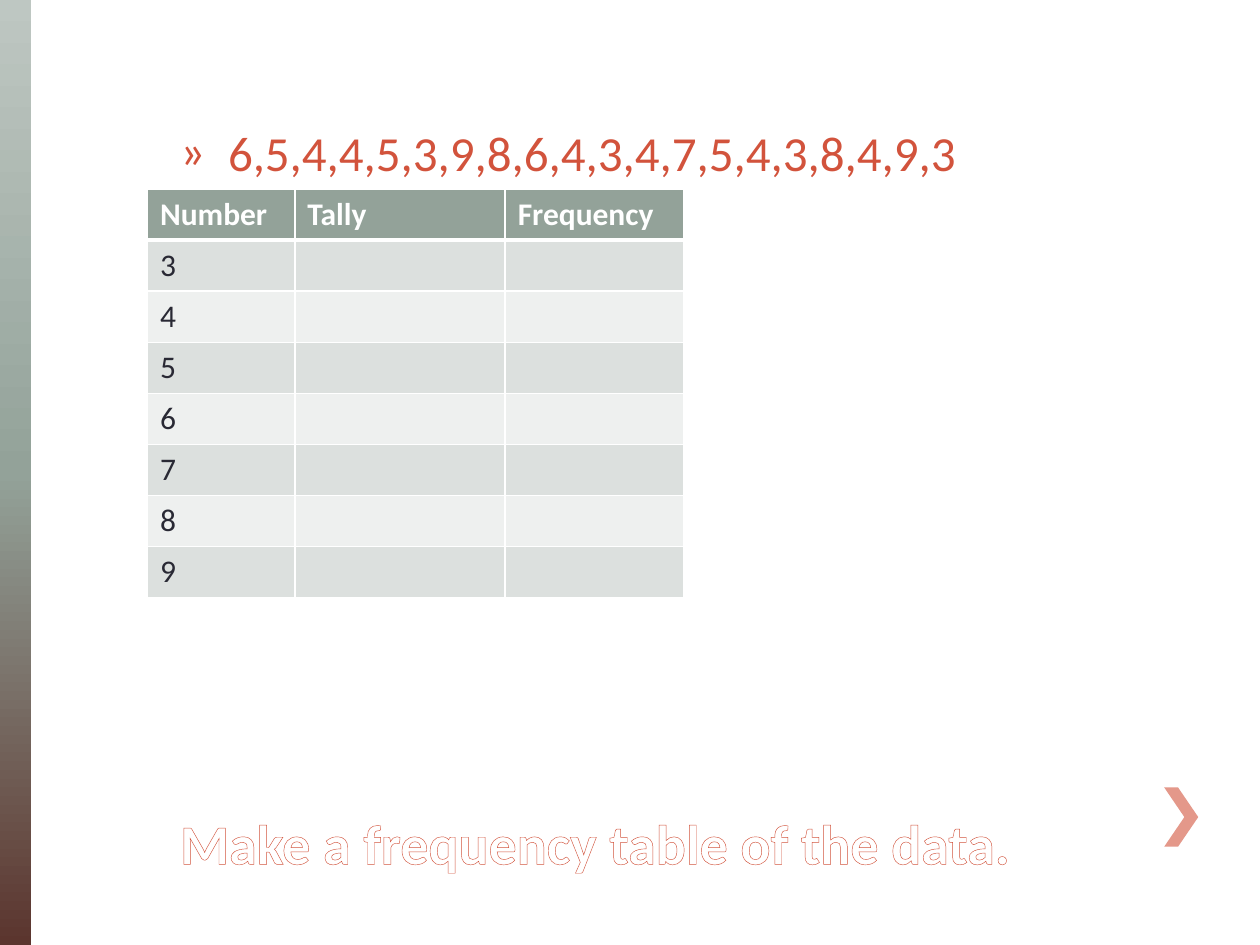
from dataclasses import dataclass

from lxml import etree
from pptx import Presentation
from pptx.dml.color import RGBColor
from pptx.enum.shapes import MSO_SHAPE
from pptx.enum.text import MSO_ANCHOR, MSO_AUTO_SIZE, PP_ALIGN
from pptx.oxml.ns import qn
from pptx.util import Inches, Pt

RECTANGLE = MSO_SHAPE.RECTANGLE
LEFT = PP_ALIGN.LEFT
TOP, BOTTOM = MSO_ANCHOR.TOP, MSO_ANCHOR.BOTTOM
NO_AUTOFIT = MSO_AUTO_SIZE.NONE


@dataclass(frozen=True)
class Theme:
    font: str = "Calibri"
    title_size: int = 32
    body_size: int = 28
    table_size: int = 18
    white: str = "FFFFFF"
    text: str = "292934"
    accent: str = "D2533C"
    chevron: str = "E4988A"
    header: str = "93A299"
    bands: tuple = ("DCE0DE", "EEF0EF")
    bar_stops: tuple = ((0, "BEC7C2"), (50, "93A299"), (100, "5B352E"))


THEME = Theme()
HEADINGS = ("Number", "Tally", "Frequency")
NUMBERS = range(3, 10)
COLUMN_WIDTHS = (1.17, 1.67, 1.42)
ROW_HEIGHT = 0.405


def add_child(parent, tag, **attributes):
    return etree.SubElement(parent, qn(tag), attributes)


def add_solid_fill(parent, color):
    add_child(add_child(parent, "a:solidFill"), "a:srgbClr", val=color)


def format_runs(paragraph, size, color, bold=False):
    for run in paragraph.runs:
        run.font.name = THEME.font
        run.font.size = Pt(size)
        run.font.bold = bold
        run.font.color.rgb = RGBColor.from_string(color)


def fill_placeholder(placeholder, box, text, anchor):
    """Move a placeholder, set its text and return the paragraph."""
    placeholder.left, placeholder.top, placeholder.width, placeholder.height = map(Inches, box)
    frame = placeholder.text_frame
    frame.text = text
    frame.auto_size = NO_AUTOFIT
    frame.vertical_anchor = anchor
    paragraph = frame.paragraphs[0]
    paragraph.alignment = LEFT
    return paragraph


def outline_text(paragraph, color):
    for run in paragraph.runs:
        properties = run.font._element
        line = add_child(properties, "a:ln", w=str(Pt(1)))
        add_solid_fill(line, color)
        properties.insert(0, line)


def set_bullet(paragraph, character, indent):
    properties = paragraph._p.get_or_add_pPr()
    properties.set("marL", str(Inches(indent)))
    properties.set("indent", str(-Inches(indent)))
    add_child(properties, "a:buFont", typeface=THEME.font)
    add_child(properties, "a:buChar", char=character)


def add_gradient_bar(slide, box, stops):
    bar = slide.shapes.add_shape(RECTANGLE, *map(Inches, box))
    bar.shadow.inherit = False
    bar.line.fill.background()
    bar.fill.gradient()
    bar.fill.gradient_angle = 270
    stop_list = bar._element.spPr.find(qn("a:gradFill")).find(qn("a:gsLst"))
    for stop in list(stop_list):
        stop_list.remove(stop)
    for position, color in stops:
        stop = add_child(stop_list, "a:gs", pos=str(position * 1000))
        add_child(stop, "a:srgbClr", val=color)


def add_chevron(slide, left, top, width, height, thickness):
    right, middle, bottom = left + width, top + height / 2, top + height
    points = [
        (left, top), (left + thickness, top), (right, middle),
        (left + thickness, bottom), (left, bottom), (right - thickness, middle),
    ]
    builder = slide.shapes.build_freeform(*map(Inches, points[0]))
    builder.add_line_segments([(Inches(x), Inches(y)) for x, y in points[1:]], close=True)
    chevron = builder.convert_to_shape()
    chevron.shadow.inherit = False
    chevron.fill.solid()
    chevron.fill.fore_color.rgb = RGBColor.from_string(THEME.chevron)
    chevron.line.fill.background()


def format_cell(cell, row):
    """Give a cell its borders, fill and font; row 0 is the header."""
    properties = cell._tc.get_or_add_tcPr()
    top, bottom = (3 if row == 1 else 1), (3 if row == 0 else 1)
    for side, width in zip("LRTB", (1, 1, top, bottom)):
        add_solid_fill(add_child(properties, f"a:ln{side}", w=str(Pt(width))), THEME.white)
    is_header = row == 0
    cell.fill.solid()
    fill = THEME.header if is_header else THEME.bands[(row - 1) % 2]
    cell.fill.fore_color.rgb = RGBColor.from_string(fill)
    color = THEME.white if is_header else THEME.text
    format_runs(cell.text_frame.paragraphs[0], THEME.table_size, color, is_header)


def add_frequency_table(slide, left, top):
    rows = [HEADINGS] + [(str(number), "", "") for number in NUMBERS]
    table = slide.shapes.add_table(
        len(rows), len(HEADINGS), Inches(left), Inches(top),
        Inches(sum(COLUMN_WIDTHS)), Inches(ROW_HEIGHT * len(rows)),
    ).table
    for column, width in zip(table.columns, COLUMN_WIDTHS):
        column.width = Inches(width)
    for row, values in enumerate(rows):
        table.rows[row].height = Inches(ROW_HEIGHT)
        for column, value in enumerate(values):
            cell = table.cell(row, column)
            cell.text_frame.text = value
            format_cell(cell, row)


def main():
    presentation = Presentation()
    presentation.slide_width, presentation.slide_height = Inches(10), Inches(7.5)
    slide = presentation.slides.add_slide(presentation.slide_layouts[1])

    add_gradient_bar(slide, (0, 0, 0.25, 7.5), THEME.bar_stops)
    add_chevron(slide, 9.24, 6.25, 0.27, 0.47, 0.11)

    title = fill_placeholder(slide.shapes.title, (1.33, 5.75, 7.92, 1.25),
                             "Make a frequency table of the data.", BOTTOM)
    format_runs(title, THEME.title_size, THEME.white, bold=True)
    outline_text(title, THEME.accent)

    data = fill_placeholder(slide.placeholders[1], (1.33, 0.92, 8.17, 4.83),
                            "6,5,4,4,5,3,9,8,6,4,3,4,7,5,4,3,8,4,9,3", TOP)
    format_runs(data, THEME.body_size, THEME.accent)
    set_bullet(data, "»", 0.38)

    add_frequency_table(slide, 1.17, 1.5)
    presentation.save("out.pptx")


if __name__ == "__main__":
    main()
